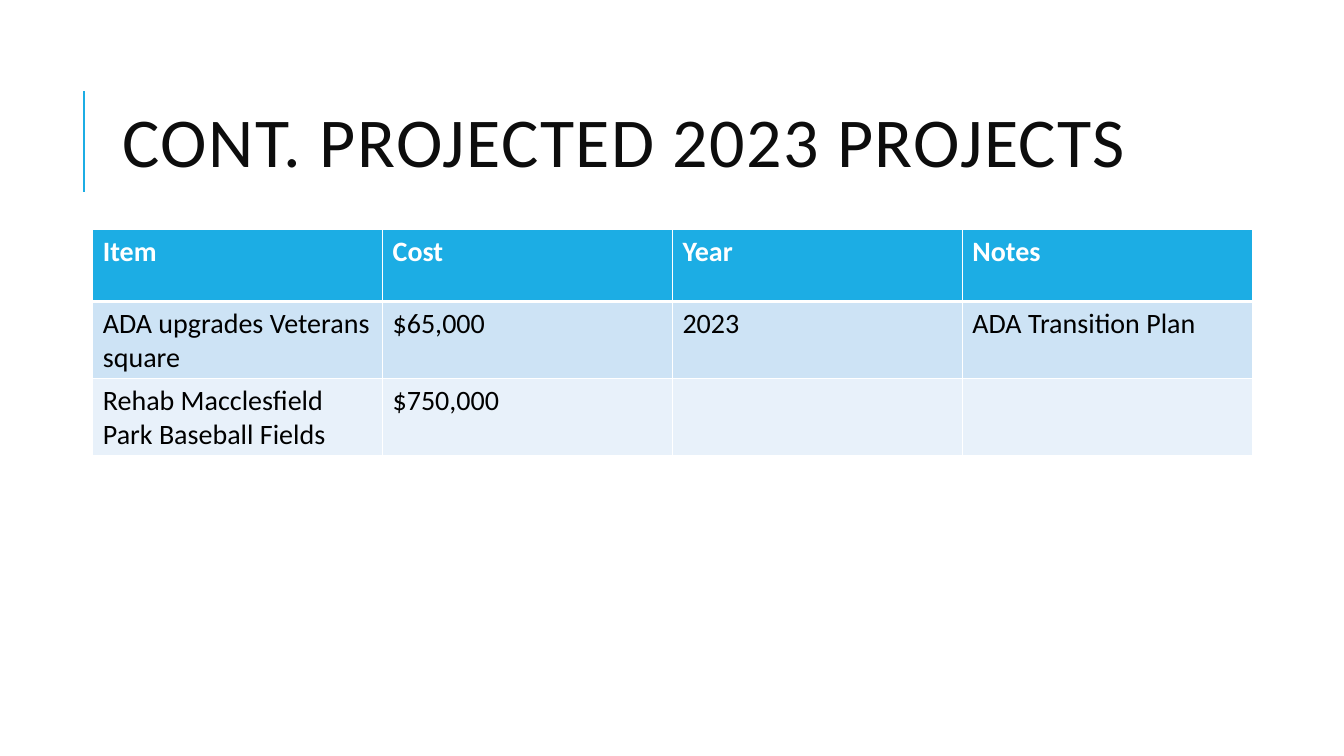
from lxml.etree import SubElement as Sub
from pptx import Presentation
from pptx.dml.color import RGBColor
from pptx.enum.shapes import MSO_CONNECTOR as Conn
from pptx.enum.text import MSO_ANCHOR as Anchor
from pptx.oxml.ns import qn
from pptx.util import Inches, Pt

BLUE = RGBColor(0x1C, 0xAD, 0xE4)
PALE = RGBColor(0xCD, 0xE3, 0xF5)
FAINT = RGBColor(0xE8, 0xF1, 0xFA)
WHITE = RGBColor(0xFF, 0xFF, 0xFF)
BLACK = RGBColor(0, 0, 0)
INK = RGBColor(0x0D, 0x0D, 0x0D)

ROWS = [
    ["Item", "Cost", "Year", "Notes"],
    ["ADA upgrades Veterans square", "$65,000", "2023", "ADA Transition Plan"],
    ["Rehab Macclesfield Park Baseball Fields", "$750,000", "", ""],
]


class Deck:
    font = "Calibri"

    def __init__(self, slide):
        self.slide = slide

    def style(self, frame, size, color, bold=False):
        for para in frame.paragraphs:
            for run in para.runs:
                font = run.font
                font.name, font.size, font.bold = self.font, Pt(size), bold
                font.color.rgb = color

    def line(self, x1, y1, x2, y2, color, width):
        ends = [Inches(v) for v in (x1, y1, x2, y2)]
        line = self.slide.shapes.add_connector(Conn.STRAIGHT, *ends)
        line.line.color.rgb = color
        line.line.width = Pt(width)
        Sub(line._element.spPr, qn("a:effectLst"))

    def title(self, text, x, y, w, h):
        box = self.slide.shapes.add_textbox(*[Inches(v) for v in (x, y, w, h)])
        frame = box.text_frame
        frame.word_wrap = True
        frame.vertical_anchor = Anchor.MIDDLE
        frame.text = text
        para = frame.paragraphs[0]
        para.line_spacing = 0.8
        self.style(frame, 50, INK)
        para.runs[0].font._element.set("spc", "100")

    def border(self, cell, side, width):
        props = cell._tc.get_or_add_tcPr()
        edge = Sub(props, qn("a:ln" + side), w=str(Pt(width)))
        fill = Sub(edge, qn("a:solidFill"))
        Sub(fill, qn("a:srgbClr"), val=str(WHITE))

    def table(self, rows, x, y, w, high):
        size = len(rows), len(rows[0])
        area = [Inches(v) for v in (x, y, w, high * len(rows))]
        table = self.slide.shapes.add_table(*size, *area).table
        for r, texts in enumerate(rows):
            table.rows[r].height = Inches(high)
            head = r == 0
            for c, text in enumerate(texts):
                cell = table.cell(r, c)
                # Borders come before the fill, with a thick rule under the header
                for side in "LRTB":
                    thick = (r, side) in ((0, "B"), (1, "T"))
                    self.border(cell, side, 3 if thick else 1)
                cell.fill.solid()
                cell.fill.fore_color.rgb = (BLUE, PALE, FAINT)[r]
                if text:
                    cell.text_frame.text = text
                    self.style(cell.text_frame, 20, WHITE if head else BLACK, head)


def main():
    prs = Presentation()
    prs.slide_width, prs.slide_height = Inches(13.33), Inches(7.5)
    deck = Deck(prs.slides.add_slide(prs.slide_layouts[6]))

    # Heading with its accent line
    deck.line(0.83, 1.9, 0.83, 0.9, BLUE, 1.5)
    deck.title("CONT. PROJECTED 2023 PROJECTS", 1.12, 0.64, 10.63, 1.64)

    # Project costs
    deck.table(ROWS, 0.92, 2.28, 11.5, 0.71)
    prs.save("out.pptx")


if __name__ == "__main__":
    main()
